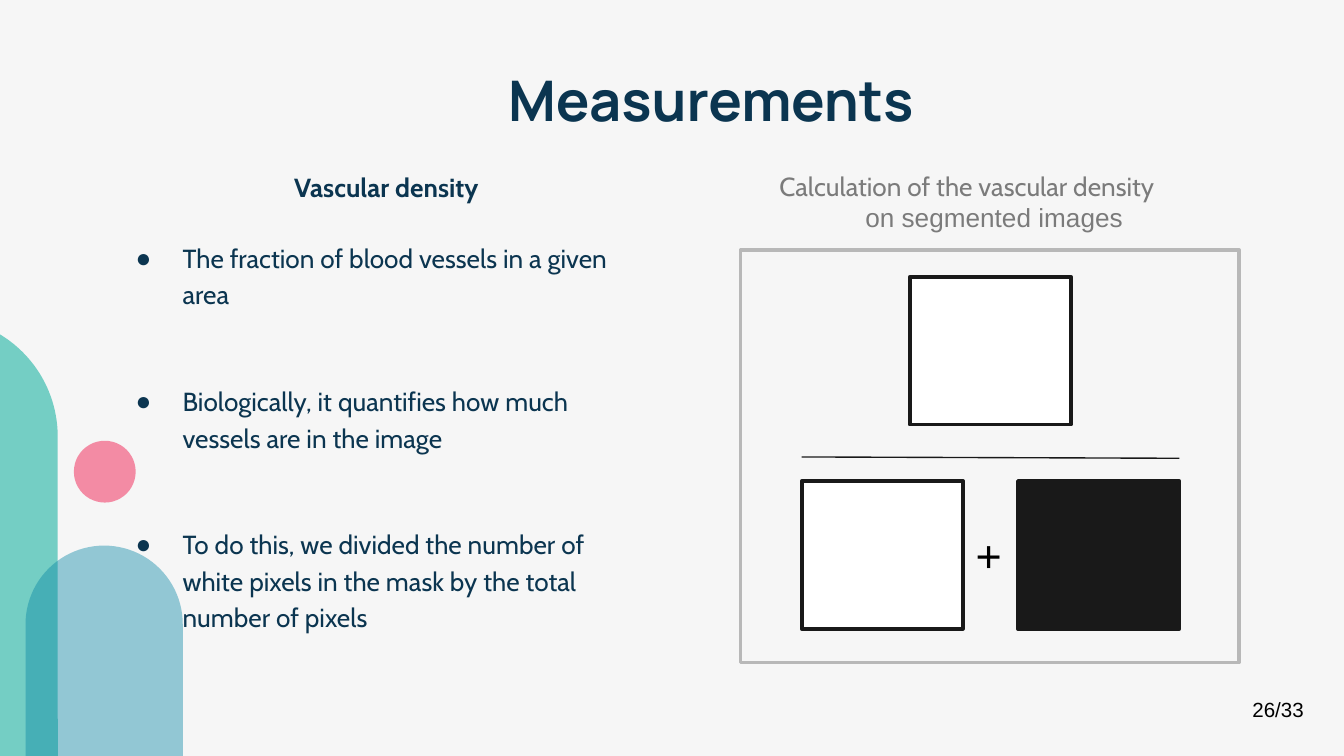
import pptx
import pptx.dml.color
import pptx.enum.shapes
import pptx.enum.text
import pptx.oxml.ns
import pptx.util
from lxml import etree

COLORS = {
    "paper": "F6F6F6", "navy": "0B3550", "teal": "74CEC4", "blue": "0584A4",
    "pink": "F2557A", "ink": "191919", "white": "FFFFFF", "black": "000000",
    "frame": "B8B8B8", "caption": "7B7B7B",
}
TITLE = "Measurements"
HEADING = "Vascular\u00a0density"
POINTS = [
    "The fraction of blood vessels in a given area",
    "Biologically, it\u00a0quantifies how much vessels are in the image",
    "To do this, we divided the number of white pixels in the mask by the total number of pixels",
]
# Places are left, top, width, height in grid cells: 100 columns across the slide
ORNAMENTS = [
    ("ROUNDED_RECTANGLE", (-13.5, 23.6, 17.8, 68.9), "teal", 100),
    ("ROUNDED_RECTANGLE", (1.9, 40.6, 11.7, 47.7), "blue", 41),
    ("OVAL", (5.5, 32.8, 4.6, 4.6), "pink", 66),
]
LABELS = [
    ("+", (71.6, 38.8, 4.2, 5), dict(size=24, color_name="black")),
    ("Calculation of the vascular density", (57, 12.2, 33.6, 3.4),
     dict(font="Cabin", color_name="caption")),
    ("on\u00a0segmented\u00a0images", (63.4, 14.5, 24.6, 3.4),
     dict(color_name="caption")),
    ("26/33", (92.2, 51.4, 6.3, 2.9), dict(size=11, color_name="black")),
]
TILE_WIDTH, TILE_HEIGHT, TILE_GAP = 12, 11, 4.1
FORMULA_CENTER, NUMERATOR_TOP, DENOMINATOR_TOP, BAR_TOP = 73.7, 20.6, 35.8, 34
FRAME = (55.1, 18.6, 37.1, 30.7)
BLANK_LINE = 19

deck = pptx.Presentation()
deck.slide_width = pptx.util.Inches(10)
deck.slide_height = deck.slide_width * 9 // 16
CELL = deck.slide_width / 100
page = deck.slides.add_slide(deck.slide_layouts[6])


def color(name):
    return pptx.dml.color.RGBColor.from_string(COLORS[name])


def cells(*lengths):
    """Turn lengths in grid cells into whole EMU."""
    return [round(length * CELL) for length in lengths]


def child(parent, tag, **attributes):
    return etree.SubElement(parent, pptx.oxml.ns.qn(tag), attributes)


def add_shape(kind, place, fill=None, line=None, opacity=100):
    preset = getattr(pptx.enum.shapes.MSO_SHAPE, kind)
    shape = page.shapes.add_shape(preset, *cells(*place))
    shape.shadow.inherit = False
    if fill:
        shape.fill.solid()
        shape.fill.fore_color.rgb = color(fill)
        if opacity < 100:
            tint = shape._element.spPr.find(".//" + pptx.oxml.ns.qn("a:srgbClr"))
            child(tint, "a:alpha", val=str(opacity * 1000))
    else:
        shape.fill.background()
    if line:
        shape.line.color.rgb = color(line)
        shape.line.width = pptx.util.Pt(2)
    else:
        shape.line.fill.background()
    return shape


def add_box(place, inset=1):
    box = page.shapes.add_textbox(*cells(*place))
    frame = box.text_frame
    frame.word_wrap = True
    frame.margin_left = frame.margin_right = cells(1)[0]
    frame.margin_top = frame.margin_bottom = cells(inset)[0]
    return frame


def write(para, text, font="Arial", size=14, color_name="navy", bold=False,
          align="LEFT", spacing=1.0, before=0, left=0, indent=0, bullet=None):
    """Fill one paragraph; left and indent are in grid cells, before in points."""
    para.alignment = getattr(pptx.enum.text.PP_ALIGN, align)
    para.line_spacing = spacing
    para.space_before = pptx.util.Pt(before)
    properties = para._p.get_or_add_pPr()
    margin, hanging = cells(left, indent)
    properties.set("marL", str(margin))
    properties.set("indent", str(hanging))
    if bullet:
        child(child(properties, "a:buClr"), "a:srgbClr", val=COLORS[color_name])
        child(properties, "a:buFont", typeface="Arial")
        child(properties, "a:buChar", char=bullet)
    span = para.add_run()
    span.text = text
    span.font.name = font
    span.font.size = pptx.util.Pt(size)
    span.font.bold = bold
    span.font.color.rgb = color(color_name)


page.background.fill.solid()
page.background.fill.fore_color.rgb = color("paper")

for kind, place, fill, opacity in ORNAMENTS:
    ornament = add_shape(kind, place, fill, opacity=opacity)
    if kind == "ROUNDED_RECTANGLE":
        ornament.adjustments[0] = 0.5

title = add_box((5.8, 3.9, 94.2, 6.3))
write(title.paragraphs[0], TITLE, font="Manrope", size=30, bold=True, align="CENTER")

body = add_box((7.6, 11.4, 40.8, 44.8))
write(body.paragraphs[0], HEADING, font="Cabin", bold=True, align="CENTER",
      spacing=1.15, left=1.5)
for number, point in enumerate(POINTS):
    write(body.add_paragraph(), point, font="Cabin", spacing=1.15,
          before=BLANK_LINE * (2 if number else 1), left=5, indent=-3.5, bullet="●")

# White pixels over white plus black pixels
row_width = 2 * TILE_WIDTH + TILE_GAP
row_left = FORMULA_CENTER - row_width / 2
tiles = [
    (row_left + TILE_WIDTH + TILE_GAP, DENOMINATOR_TOP, "ink"),
    (row_left, DENOMINATOR_TOP, "white"),
    (FORMULA_CENTER - TILE_WIDTH / 2, NUMERATOR_TOP, "white"),
]
for left, top, fill in tiles:
    add_shape("RECTANGLE", (left, top, TILE_WIDTH, TILE_HEIGHT), fill, "ink")

bar = page.shapes.add_connector(
    pptx.enum.shapes.MSO_CONNECTOR.STRAIGHT,
    *cells(row_left, BAR_TOP, row_left + row_width, BAR_TOP + 0.1))
bar.line.color.rgb = color("ink")
bar.line.width = pptx.util.Pt(0.75)
child(bar._element.spPr, "a:effectLst")

add_shape("RECTANGLE", FRAME, line="frame")

for text, place, style in LABELS:
    write(add_box(place, inset=0.5).paragraphs[0], text, **style)

deck.save("out.pptx")
